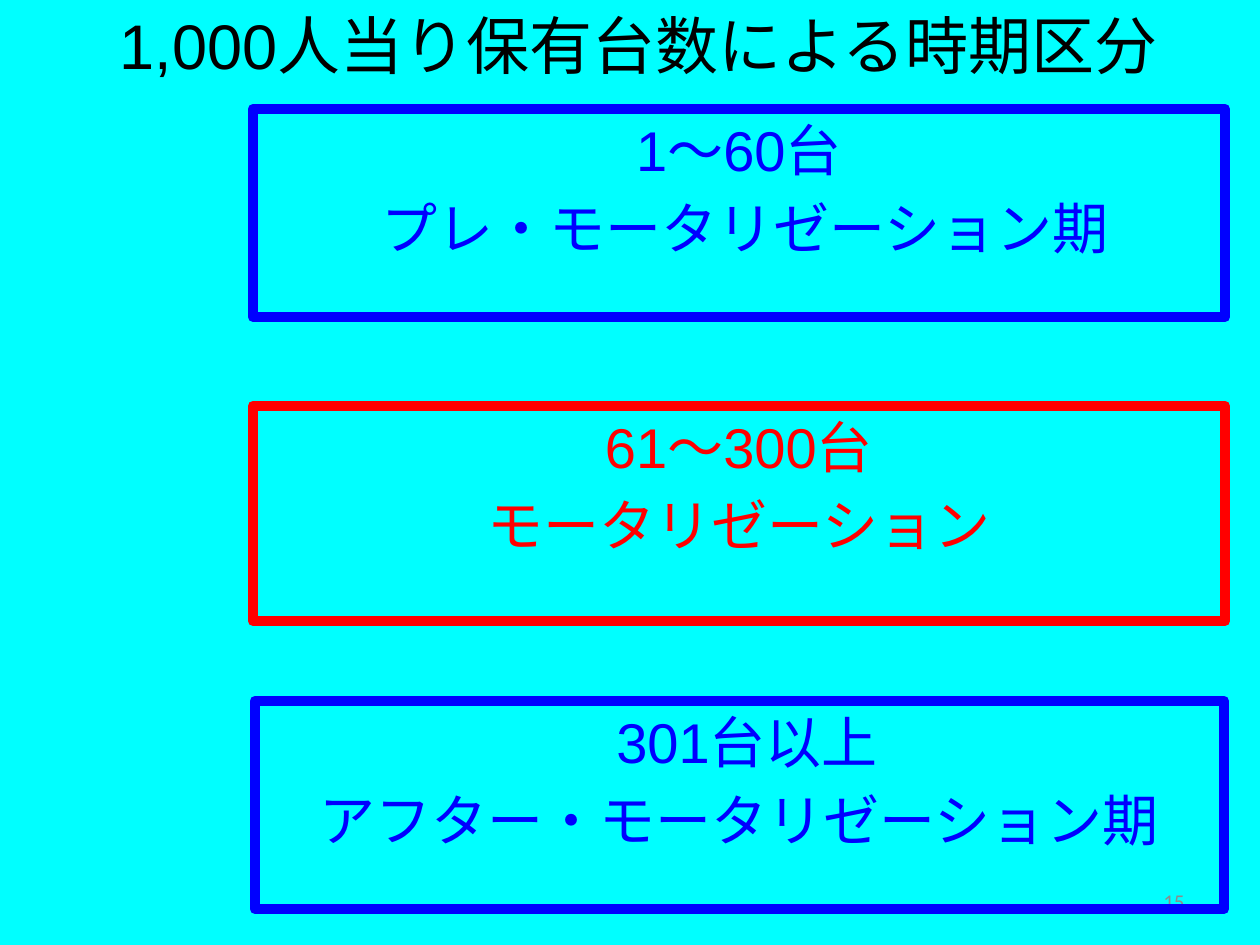
"""Builds the slide on motorization periods by vehicles per 1,000 people."""
from dataclasses import dataclass

import pptx
import pptx.dml.color
import pptx.enum.shapes
import pptx.enum.text
import pptx.util

EMU_PER_PX = 914400 / 126
ALIGN = pptx.enum.text.PP_ALIGN
ANCHOR = pptx.enum.text.MSO_ANCHOR


@dataclass(frozen=True)
class Theme:
    """Holds the colours, fonts and type sizes of the slide."""
    background: str = "00FFFF"
    ink: str = "000000"
    blue: str = "0000FF"
    red: str = "FF0000"
    grey: str = "8C8C8C"
    body_font: str = "Arial"
    number_font: str = "Calibri"
    title_size: int = 36
    period_size: int = 32
    number_size: int = 12
    border: int = 6
    space_before: float = 0.2


THEME = Theme()


def px(length):
    """Turns pixels into EMU."""
    return pptx.util.Emu(round(length * EMU_PER_PX))


def rgb(code):
    """Turns a hex code into a colour."""
    return pptx.dml.color.RGBColor.from_string(code)


def write_lines(frame, lines, size, color, font=THEME.body_font,
                align=ALIGN.CENTER, anchor=ANCHOR.TOP, spacing=THEME.space_before):
    """Fills a text frame with evenly formatted paragraphs."""
    frame.word_wrap = True
    frame.vertical_anchor = anchor
    frame.text = "\n".join(lines)
    for paragraph in frame.paragraphs:
        paragraph.alignment = align
        paragraph.space_before = pptx.util.Pt(size * spacing)
        for run in paragraph.runs:
            run.font.size = pptx.util.Pt(size)
            run.font.name = font
            run.font.color.rgb = rgb(color)


def add_label(slide, box, text, size, color, **style):
    """Adds a text box holding one line."""
    label = slide.shapes.add_textbox(*map(px, box))
    write_lines(label.text_frame, [text], size, color, **style)


def add_period(slide, box, lines, color):
    """Adds an outlined box describing one period."""
    period = slide.shapes.add_shape(
        pptx.enum.shapes.MSO_SHAPE.RECTANGLE, *map(px, box))
    period.shadow.inherit = False
    period.fill.background()
    period.line.color.rgb = rgb(color)
    period.line.width = pptx.util.Pt(THEME.border)
    write_lines(period.text_frame, lines, THEME.period_size, color)


def main():
    """Builds and saves the slide."""
    deck = pptx.Presentation()
    deck.slide_width, deck.slide_height = px(1260), px(945)
    slide = deck.slides.add_slide(deck.slide_layouts[6])
    slide.background.fill.solid()
    slide.background.fill.fore_color.rgb = rgb(THEME.background)

    add_label(slide, (0, 0, 1260, 106), " 1,000人当り保有台数による時期区分",
              THEME.title_size, THEME.ink)
    add_label(slide, (903, 876, 294, 50), "15", THEME.number_size, THEME.grey,
              font=THEME.number_font, align=ALIGN.RIGHT, anchor=ANCHOR.MIDDLE,
              spacing=0)

    periods = [
        ((253, 109, 972, 208), ["1～60台", " プレ・モータリゼーション期"], THEME.blue),
        ((253, 406, 972, 215), ["61～300台", "モータリゼーション"], THEME.red),
        ((255, 701, 969, 208), [" 301台以上", "アフター・モータリゼーション期"], THEME.blue),
    ]
    for box, lines, color in periods:
        add_period(slide, box, lines, color)

    deck.save("out.pptx")


if __name__ == "__main__":
    main()
